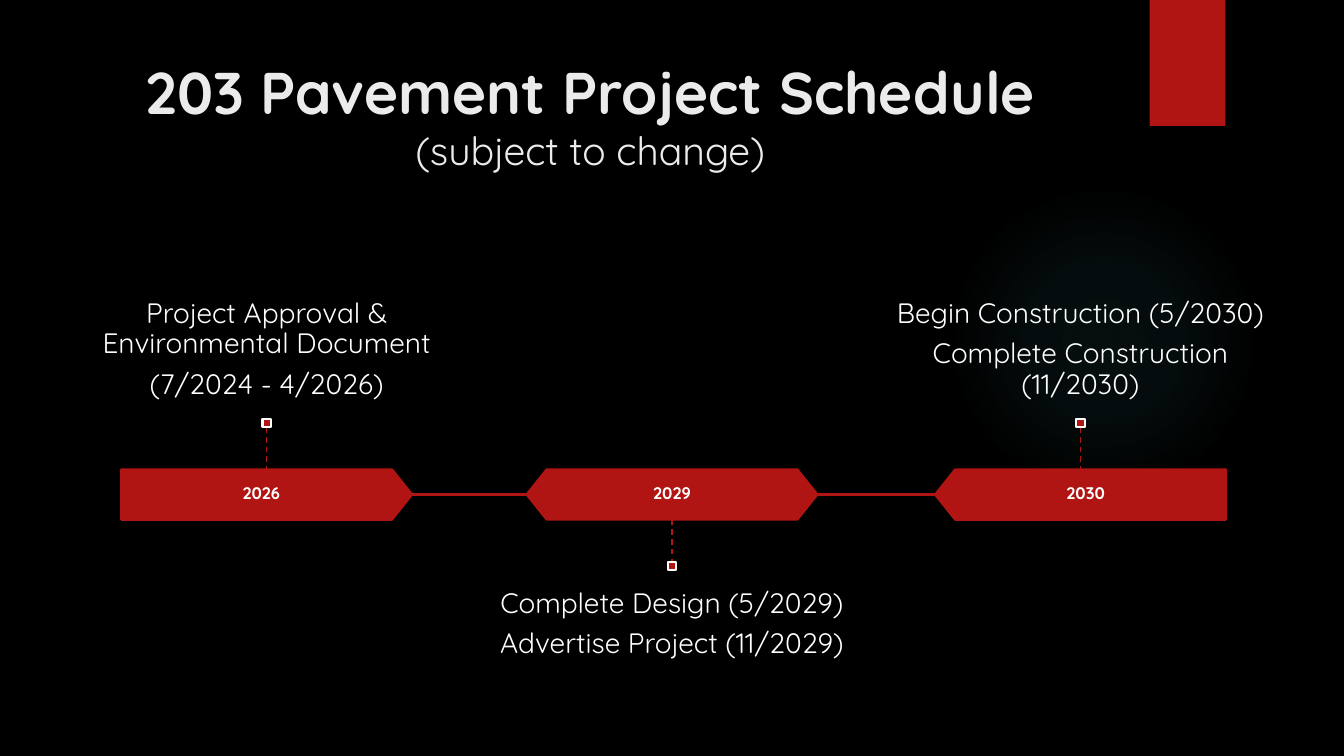
from dataclasses import dataclass

from lxml.etree import SubElement
from pptx import Presentation
from pptx.dml.color import RGBColor
from pptx.enum.dml import MSO_LINE
from pptx.enum.shapes import MSO_CONNECTOR, MSO_SHAPE
from pptx.enum.text import MSO_ANCHOR, MSO_AUTO_SIZE, PP_ALIGN
from pptx.oxml import parse_xml
from pptx.oxml.ns import nsdecls, qn
from pptx.util import Emu, Pt

FONT = "Quicksand"
RED, WHITE, BLACK, TITLE_COLOR, GLOW = "B01513", "FFFFFF", "000000", "EBEBEB", "50B9C1"

BAR_TOP, BAR_WIDTH, BAR_HEIGHT = 447, 277, 48
BAR_BOTTOM = BAR_TOP + BAR_HEIGHT
STEM, MARKER = 40, 8
NOTE_WIDTH, NOTE_HEIGHT = 386, 129


@dataclass
class Stage:
    year: str
    notes: list
    center: int
    bar: MSO_SHAPE
    year_shift: int = 0
    rotation: int = 0
    above: bool = True


STAGES = [
    Stage("2026", ["Project Approval & Environmental Document", "(7/2024 - 4/2026)"],
          254, MSO_SHAPE.PENTAGON, year_shift=-5),
    Stage("2029", ["Complete Design (5/2029)", "Advertise Project (11/2029)"],
          640, MSO_SHAPE.HEXAGON, above=False),
    Stage("2030", ["Begin Construction (5/2030)", "Complete Construction (11/2030)"],
          1029, MSO_SHAPE.PENTAGON, year_shift=5, rotation=180),
]


def px(length):
    return Emu(round(length * 9525))


def color(value):
    return RGBColor.from_string(value)


def add_box(slide, kind, box, fill, line=None):
    shape = slide.shapes.add_shape(kind, *map(px, box))
    shape.shadow.inherit = False
    shape.fill.solid()
    shape.fill.fore_color.rgb = color(fill)
    if line:
        shape.line.color.rgb = color(line)
        shape.line.width = Pt(1.5)
    else:
        shape.line.fill.background()
    return shape


def add_line(slide, start, end, width, dash=None):
    line = slide.shapes.add_connector(MSO_CONNECTOR.STRAIGHT, *map(px, (*start, *end)))
    line.line.color.rgb = color(RED)
    line.line.width = Pt(width)
    if dash:
        line.line.dash_style = dash
    SubElement(line.element.spPr, qn("a:effectLst"))


def add_text(slide, box, lines, size, anchor, inset, bold=False):
    """Place centred white paragraphs; inset is (horizontal, vertical)."""
    frame = slide.shapes.add_textbox(*map(px, box)).text_frame
    frame.word_wrap = True
    frame.vertical_anchor = anchor
    frame.margin_left = frame.margin_right = px(inset[0])
    frame.margin_top = frame.margin_bottom = px(inset[1])
    frame.text = "\n".join(lines)
    for paragraph in frame.paragraphs:
        paragraph.alignment = PP_ALIGN.CENTER
        paragraph.line_spacing = 0.9
        paragraph.space_after = Pt(7)
        paragraph.font.name = FONT
        paragraph.font.size = Pt(size)
        paragraph.font.bold = bold
        paragraph.font.color.rgb = color(WHITE)


def add_backdrop(slide):
    slide.background.fill.solid()
    slide.background.fill.fore_color.rgb = color(BLACK)
    glow = add_box(slide, MSO_SHAPE.OVAL, (903, 176, 296, 296), GLOW)
    stops = "".join(
        f'<a:gs pos="{position}000"><a:srgbClr val="{GLOW}">'
        f'<a:alpha val="{alpha}000"/></a:srgbClr></a:gs>'
        for position, alpha in ((0, 7), (36, 6), (69, 0)))
    gradient = parse_xml(
        f'<a:gradFill {nsdecls("a")}><a:gsLst>{stops}</a:gsLst><a:path path="circle">'
        '<a:fillToRect l="50000" t="50000" r="50000" b="50000"/></a:path></a:gradFill>')
    properties = glow.element.spPr
    properties.replace(properties.find(qn("a:solidFill")), gradient)
    add_box(slide, MSO_SHAPE.RECTANGLE, (1095, 0, 72, 120), RED)


def add_title(slide, box):
    title = slide.shapes.title
    title.left, title.top, title.width, title.height = map(px, box)
    frame = title.text_frame
    frame.auto_size = MSO_AUTO_SIZE.NONE
    frame.word_wrap = True
    frame.vertical_anchor = MSO_ANCHOR.TOP
    paragraph = frame.paragraphs[0]
    paragraph.alignment = PP_ALIGN.CENTER
    heading = paragraph.add_run()
    heading.text = "203 Pavement Project Schedule"
    paragraph.add_line_break()
    caveat = paragraph.add_run()
    caveat.text = "(subject to change)"
    for run, size, bold in ((heading, 42, True), (caveat, 28, False)):
        run.font.name = FONT
        run.font.size = Pt(size)
        run.font.bold = bold
        run.font.color.rgb = color(TITLE_COLOR)


def add_stage(slide, stage):
    """Place a year bar with its stem, marker and notes above or below it."""
    left = stage.center - BAR_WIDTH / 2
    bar = add_box(slide, stage.bar, (left, BAR_TOP, BAR_WIDTH, BAR_HEIGHT), RED, RED)
    bar.adjustments[0] = 0.4
    bar.rotation = stage.rotation
    add_text(slide, (left + stage.year_shift, BAR_TOP, BAR_WIDTH, BAR_HEIGHT),
             [stage.year], 12, MSO_ANCHOR.MIDDLE, (10, 10), bold=True)

    if stage.above:
        stem_start, stem_end = BAR_TOP - STEM, BAR_TOP
        marker_top = stem_start - MARKER
        note_top, anchor = marker_top - NOTE_HEIGHT, MSO_ANCHOR.BOTTOM
    else:
        stem_start, stem_end = BAR_BOTTOM, BAR_BOTTOM + STEM
        marker_top = stem_end
        note_top, anchor = marker_top + MARKER, MSO_ANCHOR.TOP
    add_line(slide, (stage.center, stem_start), (stage.center, stem_end), 1, MSO_LINE.DASH)
    add_box(slide, MSO_SHAPE.RECTANGLE,
            (stage.center - MARKER / 2, marker_top, MARKER, MARKER), RED, WHITE)
    add_text(slide, (stage.center - NOTE_WIDTH / 2, note_top, NOTE_WIDTH, NOTE_HEIGHT),
             stage.notes, 20, anchor, (0, 18))


def add_timeline(slide):
    middle = BAR_TOP + BAR_HEIGHT / 2
    for before, after in zip(STAGES, STAGES[1:]):
        add_line(slide, (before.center + BAR_WIDTH / 2, middle),
                 (after.center - BAR_WIDTH / 2, middle), 1.5)
    for stage in STAGES:
        add_stage(slide, stage)


def main():
    deck = Presentation()
    deck.slide_width, deck.slide_height = px(1280), px(720)
    slide = deck.slides.add_slide(deck.slide_layouts[5])
    add_backdrop(slide)
    add_title(slide, (68, 48, 988, 147))
    add_timeline(slide)
    deck.save("out.pptx")


if __name__ == "__main__":
    main()
